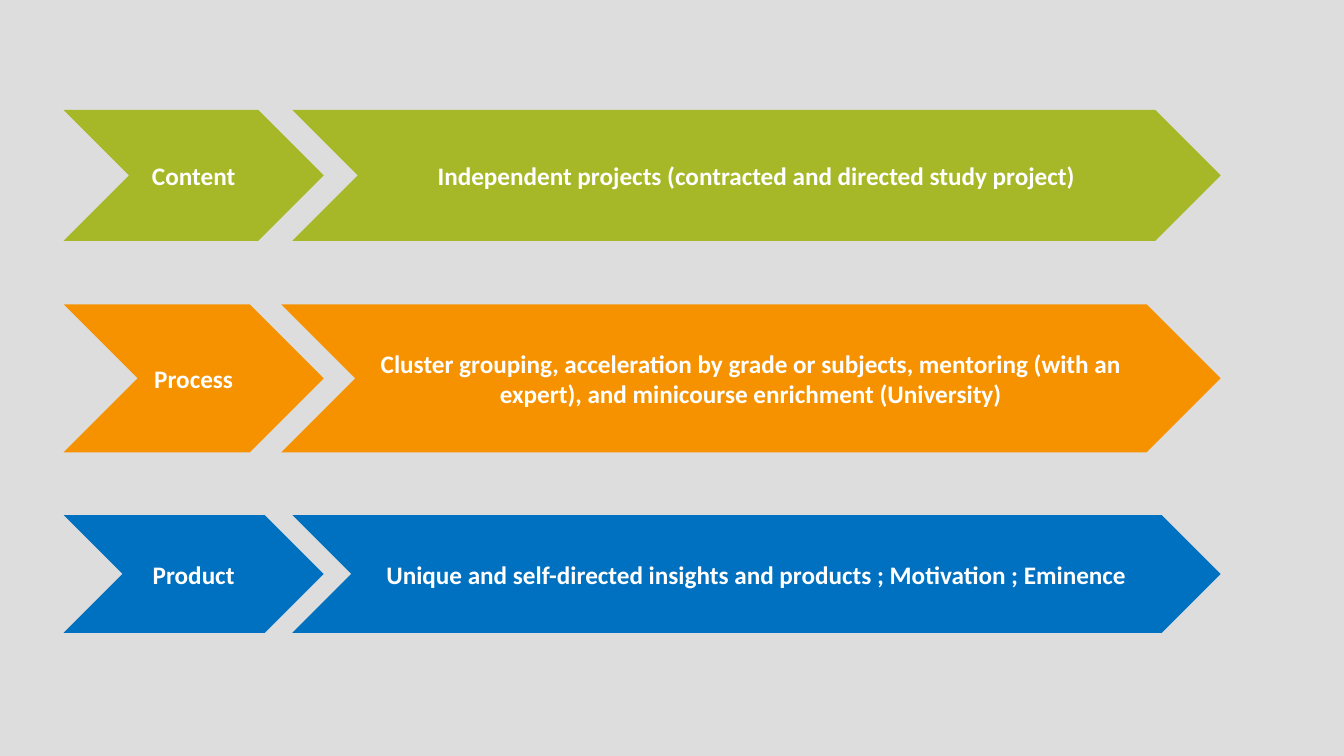
"""Build a slide of three chevron rows: content, process and product."""
from pptx import Presentation
from pptx.dml.color import RGBColor
from pptx.enum.shapes import MSO_SHAPE
from pptx.enum.text import MSO_ANCHOR, PP_ALIGN
from pptx.util import Pt

COLORS = {
    "background": "DDDDDD",
    "green": "A6B727",
    "orange": "F69200",
    "blue": "0070C0",
    "text": "FFFFFF",
}
LABEL_LEFT, LABEL_WIDTH = 45.4, 185.8
RIGHT_EDGE = 871.9

ROWS = [
    ("Content", "Independent projects (contracted and directed study project)",
     "green", 78.5, 93.6, 208.8),
    ("Process", "Cluster grouping, acceleration by grade or subjects, mentoring "
     "(with an expert), and minicourse enrichment (University)",
     "orange", 217.4, 105.8, 200.9),
    ("Product", "Unique and self-directed insights and products ; Motivation ; Eminence",
     "blue", 367.9, 84.2, 208.8),
]


def add_chevron(left, top, width, height, color, text):
    s = slide.shapes.add_shape(MSO_SHAPE.CHEVRON, Pt(left), Pt(top), Pt(width), Pt(height))
    s.shadow.inherit = False
    s.fill.solid()
    s.fill.fore_color.rgb = RGBColor.from_string(COLORS[color])
    s.line.fill.background()
    tf = s.text_frame
    tf.word_wrap = True
    tf.vertical_anchor = MSO_ANCHOR.MIDDLE
    tf.text = text
    p = tf.paragraphs[0]
    p.alignment = PP_ALIGN.CENTER
    r = p.runs[0]
    r.font.name = "Calibri"
    r.font.size = Pt(18)
    r.font.bold = True
    r.font.color.rgb = RGBColor.from_string(COLORS["text"])


prs = Presentation()
prs.slide_width, prs.slide_height = Pt(960), Pt(540)
slide = prs.slides.add_slide(prs.slide_layouts[6])
slide.background.fill.solid()
slide.background.fill.fore_color.rgb = RGBColor.from_string(COLORS["background"])

for label, detail, color, top, height, detail_left in ROWS:
    add_chevron(LABEL_LEFT, top, LABEL_WIDTH, height, color, label)
    add_chevron(detail_left, top, RIGHT_EDGE - detail_left, height, color, detail)

prs.save("out.pptx")
